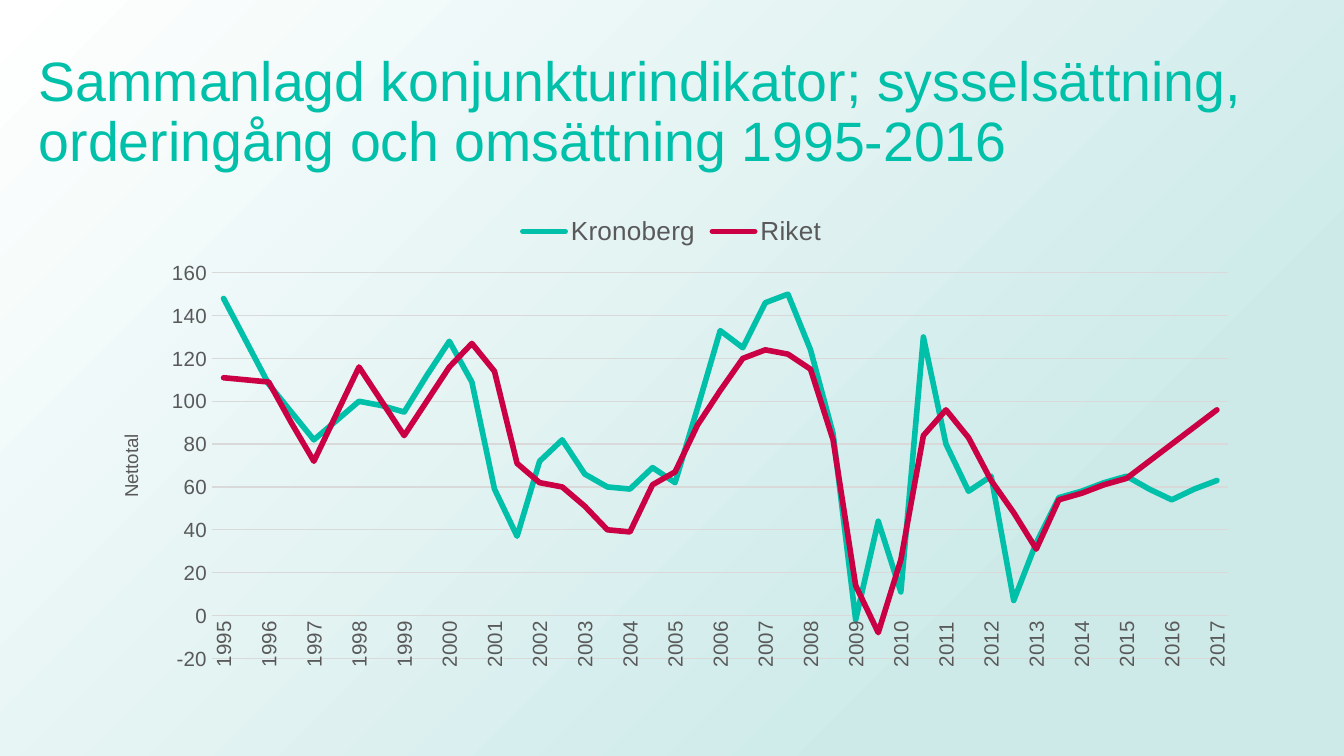
from lxml.etree import SubElement
from pptx import Presentation
from pptx.chart.data import CategoryChartData
from pptx.dml.color import RGBColor
from pptx.enum.chart import XL_CHART_TYPE, XL_LEGEND_POSITION, XL_TICK_MARK
from pptx.enum.shapes import MSO_SHAPE
from pptx.enum.text import MSO_ANCHOR
from pptx.oxml import parse_xml
from pptx.oxml.ns import nsdecls, qn
from pptx.util import Inches, Pt

WIDTH = Inches(10)
HEIGHT = WIDTH * 9 // 16
SPAN = {"x": 8.62, "w": 8.62, "y": 3.56, "h": 3.56}
TEAL, RED, GREY, PALE = "00C0A9", "CB0044", "595959", "D9D9D9"
TITLE = "Sammanlagd konjunkturindikator; sysselsättning, orderingång och omsättning 1995-2016"
YEARS = [str(1995 + half // 2) for half in range(45)]
SERIES = {
    "Kronoberg": (TEAL, [
        148, 128, 108, 95, 82, 91, 100, 98, 95, 112, 128, 109, 59, 37, 72,
        82, 66, 60, 59, 69, 62, 97, 133, 125, 146, 150, 124, 85, -2, 44,
        11, 130, 80, 58, 65, 7, 34, 55, 58, 62, 65, 59, 54, 59, 63]),
    "Riket": (RED, [
        111, 110, 109, 90, 72, 94, 116, 100, 84, 100, 116, 127, 114, 71, 62,
        60, 51, 40, 39, 61, 67, 89, 105, 120, 124, 122, 115, 82, 14, -8,
        26, 84, 96, 83, 63, 48, 31, 54, 57, 61, 64, 72, 80, 88, 96]),
}


def color(code):
    """Return the colour for a hex string."""
    return RGBColor.from_string(code)


def set_font(font, size, code):
    """Give a font the slide's typeface, a size and a colour."""
    font.name = "Arial"
    font.size = Pt(size)
    font.bold = False
    font.color.rgb = color(code)


def set_line(line, code, width):
    """Give a line a colour and a width in points."""
    line.color.rgb = color(code)
    line.width = Pt(width)


def add_backdrop(slide):
    """Cover the slide with a gradient that spreads from the lower right."""
    shape = slide.shapes.add_shape(MSO_SHAPE.RECTANGLE, 0, 0, WIDTH, HEIGHT)
    shape.shadow.inherit = False
    shape.line.fill.background()
    shape.fill.background()
    props = shape._element.spPr
    props.replace(props.find(qn("a:noFill")), parse_xml(
        f'<a:gradFill {nsdecls("a")} rotWithShape="1"><a:gsLst>'
        '<a:gs pos="23000"><a:srgbClr val="CDEAE9"/></a:gs>'
        '<a:gs pos="100000"><a:srgbClr val="FFFFFF"/></a:gs></a:gsLst>'
        '<a:path path="circle"><a:fillToRect l="100000" t="100000"/></a:path>'
        '</a:gradFill>'))


def add_title(slide):
    """Add the heading."""
    box = slide.shapes.add_textbox(Inches(0.19), Inches(0.3), Inches(10.02), Inches(1.09))
    frame = box.text_frame
    frame.word_wrap = True
    frame.vertical_anchor = MSO_ANCHOR.MIDDLE
    frame.text = TITLE
    para = frame.paragraphs[0]
    para.line_spacing = 0.9
    set_font(para.runs[0].font, 29.7, TEAL)


def place(node, index, **parts):
    """Set the manual layout of a chart part, given in inches."""
    old = node.find(qn("c:layout"))
    if old is not None:
        node.remove(old)
    layout = parse_xml(f'<c:layout {nsdecls("c")}/>')
    manual = SubElement(layout, qn("c:manualLayout"))
    if "w" in parts:
        SubElement(manual, qn("c:layoutTarget")).set("val", "inner")
    for side in ("xMode", "yMode"):
        SubElement(manual, qn(f"c:{side}")).set("val", "edge")
    for name, size in parts.items():
        SubElement(manual, qn(f"c:{name}")).set("val", f"{size / SPAN[name]:.4f}")
    node.insert(index, layout)


def style_years(axis):
    """Show each year once, turned upright, along the zero line."""
    axis.major_tick_mark = XL_TICK_MARK.NONE
    set_font(axis.tick_labels.font, 11, GREY)
    set_line(axis.format.line, PALE, 0.75)
    node = axis._element
    node.find(qn("c:txPr")).find(qn("a:bodyPr")).set("rot", "-5400000")
    skip = parse_xml(f'<c:tickLblSkip {nsdecls("c")} val="2"/>')
    node.find(qn("c:noMultiLvlLbl")).addprevious(skip)


def style_values(axis):
    """Set the scale, grid and title of the value axis."""
    axis.minimum_scale, axis.maximum_scale, axis.major_unit = -20, 160, 20
    axis.major_tick_mark = XL_TICK_MARK.NONE
    axis.format.line.fill.background()
    set_line(axis.major_gridlines.format.line, PALE, 0.75)
    labels = axis.tick_labels
    labels.number_format = "0"
    labels.number_format_is_linked = False
    set_font(labels.font, 11, GREY)
    frame = axis.axis_title.text_frame
    frame.text = "Nettotal"
    set_font(frame.paragraphs[0].runs[0].font, 10, GREY)
    body = frame._txBody.find(qn("a:bodyPr"))
    body.set("rot", "-5400000")
    body.set("vert", "horz")
    place(axis.axis_title._element, 1, x=0.17, y=1.71)


def add_lines(slide):
    """Add the line chart of both series."""
    data = CategoryChartData(number_format="0")
    data.categories = YEARS
    for name, (_, values) in SERIES.items():
        data.add_series(name, values)
    chart = slide.shapes.add_chart(
        XL_CHART_TYPE.LINE, Inches(0.69), Inches(1.5),
        Inches(SPAN["w"]), Inches(SPAN["h"]), data).chart
    chart.has_title = False
    chart.has_legend = True
    chart.legend.position = XL_LEGEND_POSITION.TOP
    chart.legend.include_in_layout = False
    set_font(chart.legend.font, 14, GREY)
    plot = chart.plots[0]
    plot.vary_by_categories = False
    for series in plot.series:
        series.smooth = False
        set_line(series.format.line, SERIES[series.name][0], 3)
        series._element.find(qn("c:spPr")).find(qn("a:ln")).set("cap", "rnd")
    style_years(chart.category_axis)
    style_values(chart.value_axis)
    area = chart._chartSpace.chart.plotArea
    place(area, 0, x=0.89, y=0.53, w=7.56, h=2.87)


def main():
    """Build and save the slide."""
    deck = Presentation()
    deck.slide_width, deck.slide_height = WIDTH, HEIGHT
    slide = deck.slides.add_slide(deck.slide_layouts[6])
    add_backdrop(slide)
    add_title(slide)
    add_lines(slide)
    deck.save("out.pptx")


if __name__ == "__main__":
    main()
